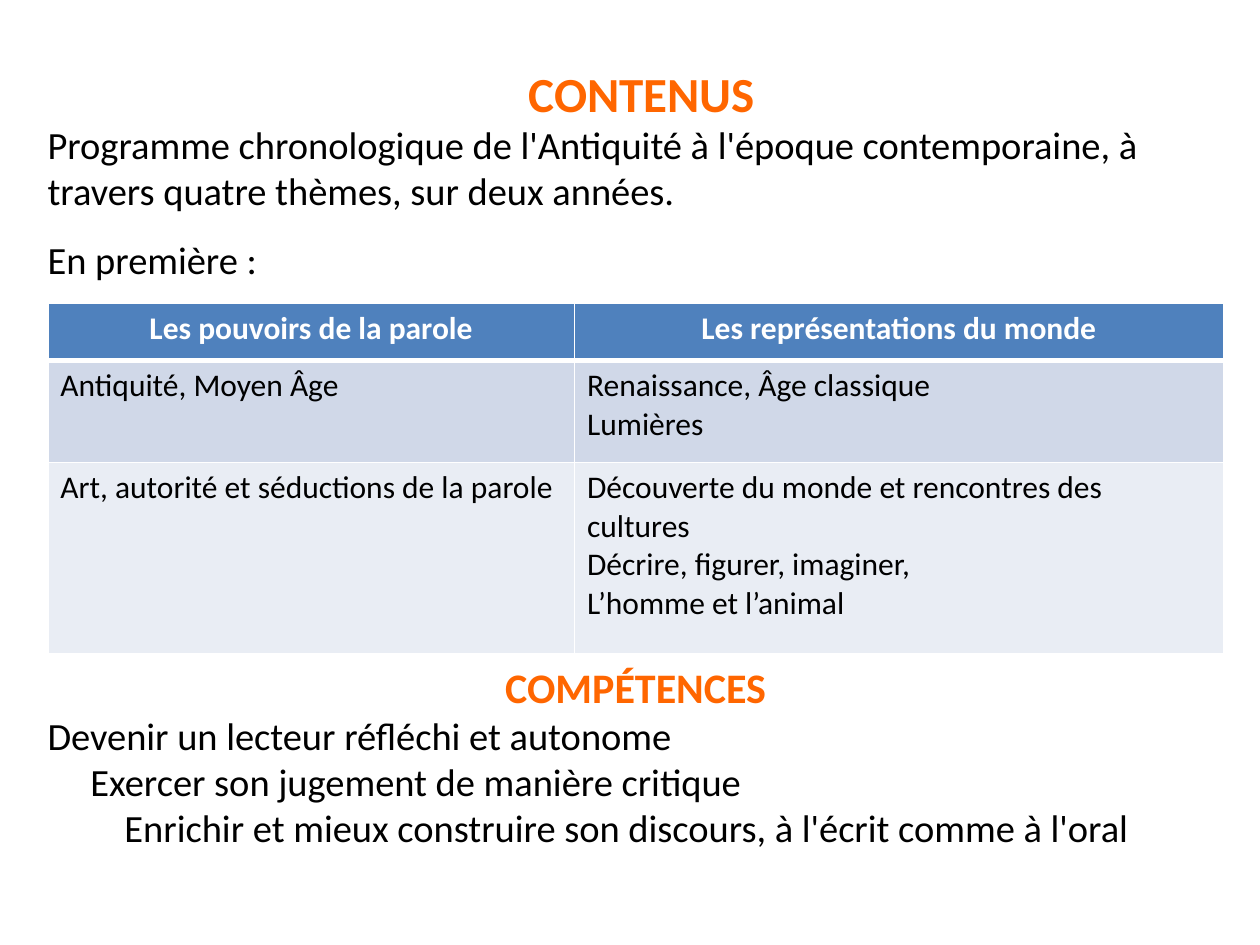
from lxml import etree
from pptx import Presentation
from pptx.dml.color import RGBColor
from pptx.enum.text import MSO_ANCHOR, MSO_AUTO_SIZE, PP_ALIGN
from pptx.oxml.ns import qn
from pptx.util import Inches, Pt

LEFT, CENTER = PP_ALIGN.LEFT, PP_ALIGN.CENTER
TOP, NO_FIT = MSO_ANCHOR.TOP, MSO_AUTO_SIZE.NONE
FONT = "Calibri"
ORANGE, BLACK, WHITE = "FF6600", "000000", "FFFFFF"
ROW_FILLS = ["4F81BD", "D0D8E8", "E9EDF4"]

TITLE = "CONTENUS"
INTRO = [
    ("Programme chronologique de l'Antiquité à l'époque contemporaine, "
     "à travers quatre thèmes, sur deux années.", {}),
    ("En première :", {"spacing": 1.5}),
]
SKILLS = [
    ("COMPÉTENCES", {"size": 24, "color": ORANGE, "bold": True, "align": CENTER}),
    ("Devenir un lecteur réfléchi et autonome", {}),
    ("Exercer son jugement de manière critique", {"indent": 0.34}),
    ("Enrichir et mieux construire son discours, à l'écrit comme à l'oral",
     {"indent": 0.61}),
]
THEMES = [
    [["Les pouvoirs de la parole"], ["Les représentations du monde"]],
    [["Antiquité, Moyen Âge"], ["Renaissance, Âge classique", "Lumières"]],
    [["Art, autorité et séductions de la parole"],
     ["Découverte du monde et rencontres des cultures",
      "Décrire, figurer, imaginer,", "L’homme et l’animal"]],
]
COLUMN_WIDTHS = [4.18, 5.15]
ROW_HEIGHTS = [0.45, 0.81, 1.52]
BOX_LEFT, BOX_WIDTH = 0.28, 9.53


def rgb(value):
    """Turn a hex string into a colour."""
    return RGBColor.from_string(value)


def write(para, text, size=22, color=BLACK, bold=False, align=LEFT,
          spacing=1.0, indent=0):
    """Put formatted text into a paragraph."""
    para.alignment, para.line_spacing = align, spacing
    para.space_before = para.space_after = Pt(0)
    if indent:
        para._p.get_or_add_pPr().set("marL", str(Inches(indent)))
    span = para.add_run()
    span.text = text
    span.font.name, span.font.size, span.font.bold = FONT, Pt(size), bold
    span.font.color.rgb = rgb(color)


def fill_frame(frame, items):
    """Write a list of (text, format) pairs, one paragraph each."""
    for index, (text, style) in enumerate(items):
        para = frame.add_paragraph() if index else frame.paragraphs[0]
        write(para, text, **style)


def place_text(box, top, height, items, left=BOX_LEFT):
    """Position a text shape and fill it from the top down."""
    box.left, box.top = Inches(left), Inches(top)
    box.width, box.height = Inches(BOX_WIDTH), Inches(height)
    frame = box.text_frame
    frame.word_wrap, frame.auto_size = True, NO_FIT
    frame.vertical_anchor = TOP
    frame.margin_top = frame.margin_bottom = 0
    fill_frame(frame, items)


def set_borders(cell, widths):
    """Draw white borders, with widths in points by side."""
    properties = cell._tc.get_or_add_tcPr()
    for position, (side, width) in enumerate(widths.items()):
        line = etree.Element(qn(f"a:ln{side}"), w=str(Pt(width)))
        solid = etree.SubElement(line, qn("a:solidFill"))
        etree.SubElement(solid, qn("a:srgbClr"), val=WHITE)
        properties.insert(position, line)


def add_themes(page):
    """Add the table of themes."""
    table = page.shapes.add_table(
        len(ROW_HEIGHTS), len(COLUMN_WIDTHS), Inches(0.38), Inches(2.41),
        Inches(sum(COLUMN_WIDTHS)), Inches(sum(ROW_HEIGHTS))).table
    for column, width in zip(table.columns, COLUMN_WIDTHS):
        column.width = Inches(width)
    for index, (row, height) in enumerate(zip(table.rows, ROW_HEIGHTS)):
        row.height = Inches(height)
        style = {"size": 18}
        if index == 0:
            style.update(color=WHITE, bold=True, align=CENTER)
        for cell, lines in zip(row.cells, THEMES[index]):
            cell.fill.solid()
            cell.fill.fore_color.rgb = rgb(ROW_FILLS[index])
            set_borders(cell, {"L": 1, "R": 1, "T": 3 if index == 1 else 1,
                               "B": 3 if index == 0 else 1})
            fill_frame(cell.text_frame, [(line, style) for line in lines])


def main():
    """Build and save the slide."""
    deck = Presentation()
    deck.slide_width, deck.slide_height = Inches(10), Inches(7.5)
    page = deck.slides.add_slide(deck.slide_layouts[5])
    heading = {"size": 28, "color": ORANGE, "bold": True, "align": CENTER}
    place_text(page.shapes.title, 0.5, 0.47, [(TITLE, heading)], left=0.33)
    for top, height, items in [(0.96, 1.4, INTRO), (5.25, 1.6, SKILLS)]:
        place_text(page.shapes.add_textbox(0, 0, 0, 0), top, height, items)
    add_themes(page)
    deck.save("out.pptx")


if __name__ == "__main__":
    main()
